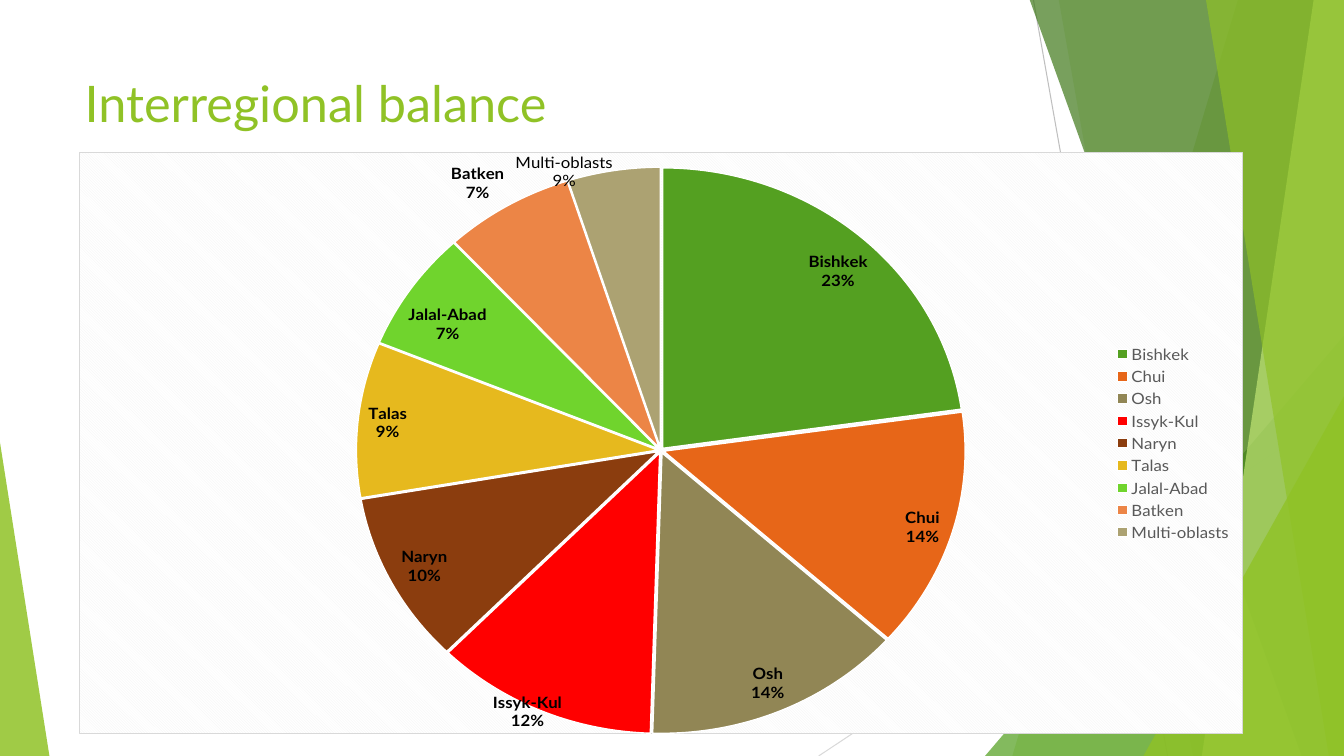
from lxml import etree
from pptx import Presentation
from pptx.chart.data import CategoryChartData
from pptx.dml.color import RGBColor
from pptx.enum.chart import XL_CHART_TYPE, XL_LABEL_POSITION, XL_LEGEND_POSITION
from pptx.enum.shapes import MSO_CONNECTOR, MSO_SHAPE
from pptx.enum.text import MSO_ANCHOR, PP_ALIGN
from pptx.oxml import parse_xml
from pptx.oxml.ns import nsdecls, qn
from pptx.util import Inches, Pt

FONT = "Lato"
COLORS = {
    "lime": "90C226", "green": "54A021", "forest": "3F7819", "pale": "C0E474",
    "silver": "BFBFBF", "mist": "D9D9D9", "haze": "F2F2F2", "white": "FFFFFF",
    "black": "000000", "gray": "595959", "orange": "E76618", "olive": "918655",
    "red": "FF0000", "brown": "8B3D0E", "gold": "E6B91E", "bright": "70D42D",
    "peach": "EC8546", "sand": "ACA272",
}
TITLE = "Interregional balance"
WIDE, HIGH = 13.33, 7.5

REGIONS = [
    ("Bishkek", 23, "green"), ("Chui", 14, "orange"), ("Osh", 14, "olive"),
    ("Issyk-Kul", 12, "red"), ("Naryn", 10, "brown"), ("Talas", 9, "gold"),
    ("Jalal-Abad", 7, "bright"), ("Batken", 7, "peach"),
    ("Multi-oblasts", 5, "sand"),
]
# Region, label position, shift as a share of the chart, own text
MOVED = [
    ("Issyk-Kul", XL_LABEL_POSITION.BEST_FIT, (0.02, -0.04), None),
    ("Batken", XL_LABEL_POSITION.OUTSIDE_END, (0, 0), None),
    ("Multi-oblasts", XL_LABEL_POSITION.OUTSIDE_END, (0, 0.03), "Multi-oblasts\n9%"),
]
RAYS = [((10.25, 0), (11.58, HIGH), "silver"), ((WIDE, 4.03), (8.12, HIGH), "mist")]
# Bands run to the right edge: top left x, bottom left x, color, opacity
# Wedges stand on the bottom edge: left, top, width, tip, color, opacity
DECOR = [
    ("band", (12.28, 10.04), "lime", 30),
    ("band", (10.5, 11.83), "lime", 20),
    ("wedge", (9.77, 3.33, 3.56, 1), "green", 72),
    ("band", (10.21, 12.91), "forest", 70),
    ("band", (13.03, 11.92), "pale", 70),
    ("band", (11.96, 13.18), "lime", 65),
    ("wedge", (11.34, 3.93, 1.99, 1), "lime", 80),
    ("wedge", (0, 4.39, 0.49, 0), "lime", 85),
]


def rgb(name):
    return RGBColor.from_string(COLORS[name])


def style(font, size, color, bold=False):
    font.name, font.size, font.bold = FONT, Pt(size), bold
    font.color.rgb = rgb(color)


def write(frame, text, size=12, color="black", bold=False, align=None):
    frame.text = text
    for para in frame.paragraphs:
        para.alignment = align
        for run in para.runs:
            style(run.font, size, color, bold)


def draw_ray(shapes, start, end, color):
    ends = [Inches(n) for n in start + end]
    ray = shapes.add_connector(MSO_CONNECTOR.STRAIGHT, *ends)
    ray.line.color.rgb = rgb(color)
    ray.line.width = Pt(0.75)
    etree.SubElement(ray.element.spPr, qn("a:effectLst"))


def draw_band(shapes, top, low):
    spots = [(WIDE, -0.01), (WIDE, HIGH), (low, HIGH)]
    pen = shapes.build_freeform(Inches(top), Inches(-0.01))
    pen.add_line_segments([(Inches(x), Inches(y)) for x, y in spots])
    return pen.convert_to_shape()


def draw_wedge(shapes, left, top, width, tip):
    box = [Inches(n) for n in (left, top, width, HIGH - top)]
    wedge = shapes.add_shape(MSO_SHAPE.ISOSCELES_TRIANGLE, *box)
    wedge.adjustments[0] = tip
    return wedge


def tint(shape, color, alpha):
    """Fill a shape with a partly transparent color and no outline."""
    shape.shadow.inherit = False
    shape.line.fill.background()
    shape.fill.solid()
    shape.fill.fore_color.rgb = rgb(color)
    tone = shape.element.spPr.find(".//" + qn("a:srgbClr"))
    etree.SubElement(tone, qn("a:alpha")).set("val", str(alpha * 1000))


def layout(x, y, extra=""):
    return parse_xml(
        f'<c:layout {nsdecls("c")}><c:manualLayout>{extra}'
        f'<c:x val="{x}"/><c:y val="{y}"/></c:manualLayout></c:layout>')


def frame_chart(root):
    """Set the hatched background, the border and the plot area."""
    root.find(qn("c:chart")).addnext(parse_xml(
        f'<c:spPr {nsdecls("c", "a")}><a:pattFill prst="dkDnDiag">'
        f'<a:fgClr><a:srgbClr val="{COLORS["haze"]}"/></a:fgClr>'
        f'<a:bgClr><a:srgbClr val="{COLORS["white"]}"/></a:bgClr></a:pattFill>'
        f'<a:ln w="9525"><a:solidFill><a:srgbClr val="{COLORS["mist"]}"/>'
        '</a:solidFill></a:ln></c:spPr>'))
    area = root.find(".//" + qn("c:plotArea"))
    for old in area.findall(qn("c:layout")):
        area.remove(old)
    place = layout(0, 0.025, '<c:layoutTarget val="inner"/>'
                   '<c:xMode val="edge"/><c:yMode val="edge"/>')
    for tag, size in (("c:w", 1), ("c:h", 0.975)):
        etree.SubElement(place[0], qn(tag)).set("val", str(size))
    area.insert(0, place)


def label_pie(series, root):
    names = [name for name, _, _ in REGIONS]
    labels = series.data_labels
    labels.show_category_name = labels.show_percentage = True
    labels.show_value = False
    labels.position = XL_LABEL_POSITION.BEST_FIT
    style(labels.font, 12, "black", True)
    for name, spot, shift, text in MOVED:
        at = names.index(name)
        label = series.points[at].data_label
        if text:
            write(label.text_frame, text)
        else:
            style(label.font, 12, "black", True)
        label.position = spot
        node = root.xpath(f".//c:dLbl[c:idx/@val='{at}']")[0]
        for tag, on in (("c:showVal", 0), ("c:showCatName", 1), ("c:showPercent", 1)):
            node.find(qn(tag)).set("val", str(on))
        if any(shift):
            node.find(qn("c:idx")).addnext(layout(*shift))
    for node in root.xpath(".//c:ser/c:dLbls | .//c:dLbl"):
        gap = etree.Element(qn("c:separator"))
        gap.text = "\n"
        node.find(qn("c:showBubbleSize")).addnext(gap)


def add_pie(shapes):
    data = CategoryChartData()
    data.categories = [name for name, _, _ in REGIONS]
    data.add_series("Series 1", [value for _, value, _ in REGIONS])
    box = [Inches(n) for n in (0.78, 1.27, 11.55, 6.2)]
    chart = shapes.add_chart(XL_CHART_TYPE.PIE, *box, data).chart
    root = chart.element
    style(chart.font, 10, "black")
    chart.has_title = False
    chart.has_legend = True
    chart.legend.position = XL_LEGEND_POSITION.RIGHT
    chart.legend.include_in_layout = False
    style(chart.legend.font, 12, "gray")
    plot = chart.plots[0]
    plot.vary_by_categories = True
    series = plot.series[0]
    for at, (_, _, color) in enumerate(REGIONS):
        look = series.points[at].format
        look.fill.solid()
        look.fill.fore_color.rgb = rgb(color)
        look.line.color.rgb = rgb("white")
        look.line.width = Pt(1)
    burst = etree.Element(qn("c:explosion"))
    burst.set("val", "1")
    root.find(".//" + qn("c:dPt")).addprevious(burst)
    label_pie(series, root)
    frame_chart(root)


def main():
    deck = Presentation()
    deck.slide_width, deck.slide_height = Inches(WIDE), Inches(HIGH)
    slide = deck.slides.add_slide(deck.slide_layouts[5])
    shapes = slide.shapes
    for ray in RAYS:
        draw_ray(shapes, *ray)
    for kind, place, color, alpha in DECOR:
        draw = draw_band if kind == "band" else draw_wedge
        tint(draw(shapes, *place), color, alpha)
    title = shapes.title
    title.left, title.top = Inches(0.74), Inches(0.67)
    title.width, title.height = Inches(9.4), Inches(1.44)
    title.text_frame.vertical_anchor = MSO_ANCHOR.TOP
    write(title.text_frame, TITLE, size=36, color="lime", align=PP_ALIGN.LEFT)
    title.element.getparent().append(title.element)
    add_pie(shapes)
    deck.save("out.pptx")


if __name__ == "__main__":
    main()
